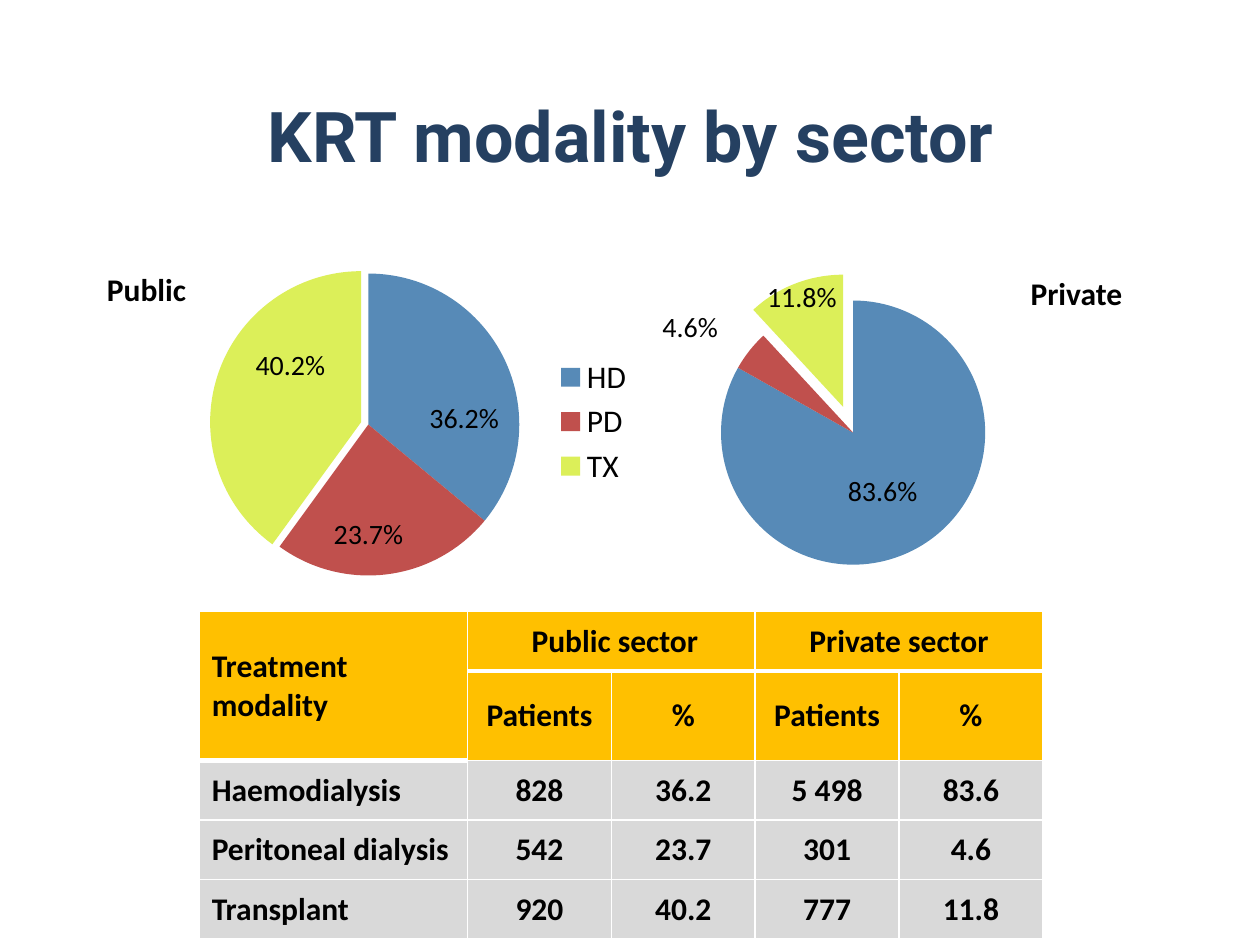
"""Build the slide on KRT modality by sector."""
from typing import NamedTuple

from lxml.etree import SubElement
from pptx import Presentation
from pptx.chart.data import CategoryChartData as ChartData
from pptx.dml.color import RGBColor as Rgb
from pptx.enum.chart import XL_CHART_TYPE as ChartType, XL_LEGEND_POSITION as LegendSide
from pptx.enum.text import MSO_ANCHOR as Anchor, PP_ALIGN as Align
from pptx.oxml import parse_xml
from pptx.oxml.ns import nsdecls, qn
from pptx.util import Pt

COLOURS = {
    "title": "254061", "text": "000000", "header": "FFC000", "body": "D9D9D9",
    "border": "FFFFFF", "HD": "578AB7", "PD": "C0504D", "TX": "DCEF59",
}
MODALITIES = ["HD", "PD", "TX"]
TABLE_ROWS = [
    ["Treatment modality", " Public sector", "", "Private sector", ""],
    ["", "Patients", "%", "Patients", "%"],
    ["Haemodialysis", "828", "36.2", "5 498", "83.6"],
    ["Peritoneal dialysis", "542", "23.7", "301", "4.6"],
    ["Transplant", "920", "40.2", "777", "11.8"],
]
MERGES = [((0, 0), (1, 0)), ((0, 1), (0, 2)), ((0, 3), (0, 4))]
COLUMN_WIDTHS = [153.4, 82.2, 82.2, 82.2, 82.2]
ROW_HEIGHT = 34
BODY = {"name": "Calibri", "size": Pt(18), "bold": True}
SHARE = {"name": "Calibri", "size": Pt(16), "bold": False}
HEADING = {"name": "Roboto", "size": Pt(40), "bold": True}


class Box(NamedTuple):
    left: float
    top: float
    width: float
    height: float

    def points(self) -> list:
        """Return the four measures as lengths."""
        return [Pt(value) for value in self]


class Label(NamedTuple):
    text: str
    box: Box
    font: dict
    colour: str = "text"
    centred: bool = False


class Pie(NamedTuple):
    box: Box
    values: list
    centre_x: float
    diameter: float
    explosion: int
    legend: bool


LABELS = [
    Label("KRT modality by sector", Box(76.3, 31.7, 568, 90), HEADING, "title", True),
    Label("Public", Box(54, 150.8, 60, 29), BODY),
    Label("Private", Box(581.8, 153, 68, 29), BODY),
    Label("40.2%", Box(139, 195.1, 55, 26.6), SHARE),
    Label("36.2%", Box(238.3, 225.4, 55, 26.6), SHARE),
    Label("23.7%", Box(183.6, 291.6, 55, 26.6), SHARE),
    Label("11.8%", Box(431.3, 156.2, 55, 26.6), SHARE),
    Label("83.6%", Box(477.4, 267.1, 55, 26.6), SHARE),
    Label("4.6%", Box(371.5, 173.5, 47, 26.6), SHARE),
]
PIES = [
    Pie(Box(110.9, 82.8, 254.9, 319.7), [36, 24, 40], 99.6, 172.6, 5, True),
    Pie(Box(371.5, 145.4, 232.6, 203.8), [84, 5, 12], 116, 151, 21, False),
]


def style_font(font, values: dict, colour: str) -> None:
    """Apply format values and a named colour to a font."""
    for key, value in values.items():
        setattr(font, key, value)
    font.color.rgb = Rgb.from_string(COLOURS[colour])


def write_text(para, text: str, values: dict, colour: str, centred: bool) -> None:
    """Write one styled span into a paragraph."""
    para.alignment = Align.CENTER if centred else Align.LEFT
    span = para.add_run()
    span.text = text
    style_font(span.font, values, colour)


def add_label(page, label: Label) -> None:
    """Add a text box."""
    frame = page.shapes.add_textbox(*label.box.points()).text_frame
    frame.word_wrap = label.centred
    frame.vertical_anchor = Anchor.MIDDLE if label.centred else Anchor.TOP
    write_text(frame.paragraphs[0], label.text, label.font, label.colour, label.centred)


def place_part(part, index: int, entries: dict) -> None:
    """Give a chart part a manual layout."""
    for old in part.findall(qn("c:layout")):
        part.remove(old)
    layout = parse_xml(f"<c:layout {nsdecls('c')}/>")
    manual = SubElement(layout, qn("c:manualLayout"))
    for tag, value in entries.items():
        SubElement(manual, qn(f"c:{tag}")).set("val", str(value))
    part.insert(index, layout)


def add_pie(page, pie: Pie) -> None:
    """Add a pie chart with its last slice pulled out."""
    data = ChartData()
    data.categories = MODALITIES
    data.add_series("Series 1", pie.values)
    chart = page.shapes.add_chart(ChartType.PIE, *pie.box.points(), data).chart
    style_font(chart.font, BODY | {"bold": False}, "text")
    chart.has_title = False
    chart.has_legend = pie.legend
    edges = {"xMode": "edge", "yMode": "edge"}
    if pie.legend:
        chart.legend.position = LegendSide.RIGHT
        chart.legend.include_in_layout = False
        place_part(chart.legend._element, 1, edges | {"x": 0.8, "y": 0.37})
    plot = chart.plots[0]
    plot.vary_by_categories = True
    series = plot.series[0]
    for index, modality in enumerate(MODALITIES):
        look = series.points[index].format
        look.fill.solid()
        look.fill.fore_color.rgb = Rgb.from_string(COLOURS[modality])
        look.line.fill.background()
    slice_shape = series._element.findall(qn("c:dPt"))[-1].find(qn("c:spPr"))
    slice_shape.addprevious(
        parse_xml(f'<c:explosion {nsdecls("c")} val="{pie.explosion}"/>'))
    place_part(plot._element.getparent(), 0, {"layoutTarget": "inner"} | edges | {
        "x": (pie.centre_x - pie.diameter / 2) / pie.box.width,
        "y": (pie.box.height - pie.diameter) / 2 / pie.box.height,
        "w": pie.diameter / pie.box.width,
        "h": pie.diameter / pie.box.height,
    })


def add_borders(cell, bottom: float) -> None:
    """Draw the four borders of a cell."""
    properties = cell._tc.get_or_add_tcPr()
    for index, (side, width) in enumerate({"L": 1, "R": 1, "T": 1, "B": bottom}.items()):
        properties.insert(index, parse_xml(
            f'<a:ln{side} {nsdecls("a")} w="{Pt(width)}"><a:solidFill>'
            f'<a:srgbClr val="{COLOURS["border"]}"/></a:solidFill></a:ln{side}>'))


def add_modality_table(page, left: float, top: float) -> None:
    """Add the table of patients by modality and sector."""
    box = Box(left, top, sum(COLUMN_WIDTHS), ROW_HEIGHT * len(TABLE_ROWS))
    table = page.shapes.add_table(
        len(TABLE_ROWS), len(COLUMN_WIDTHS), *box.points()).table
    for column, width in zip(table.columns, COLUMN_WIDTHS):
        column.width = Pt(width)
    for row_index, texts in enumerate(TABLE_ROWS):
        table.rows[row_index].height = Pt(ROW_HEIGHT)
        for column_index, text in enumerate(texts):
            cell = table.cell(row_index, column_index)
            cell.vertical_anchor = Anchor.MIDDLE
            cell.fill.solid()
            fill = "header" if row_index < 2 else "body"
            cell.fill.fore_color.rgb = Rgb.from_string(COLOURS[fill])
            thick = row_index == 0 or (row_index, column_index) == (1, 0)
            add_borders(cell, 3 if thick else 1)
            if text:
                para = cell.text_frame.paragraphs[0]
                write_text(para, text, BODY, "text", column_index > 0)
    for first, last in MERGES:
        table.cell(*first).merge(table.cell(*last))


def main() -> None:
    """Build and save the deck."""
    deck = Presentation()
    deck.slide_width, deck.slide_height = Pt(720), Pt(540)
    page = deck.slides.add_slide(deck.slide_layouts[6])
    add_modality_table(page, 113.8, 349.5)
    for pie in PIES:
        add_pie(page, pie)
    for label in LABELS:
        add_label(page, label)
    deck.save("out.pptx")


if __name__ == "__main__":
    main()
